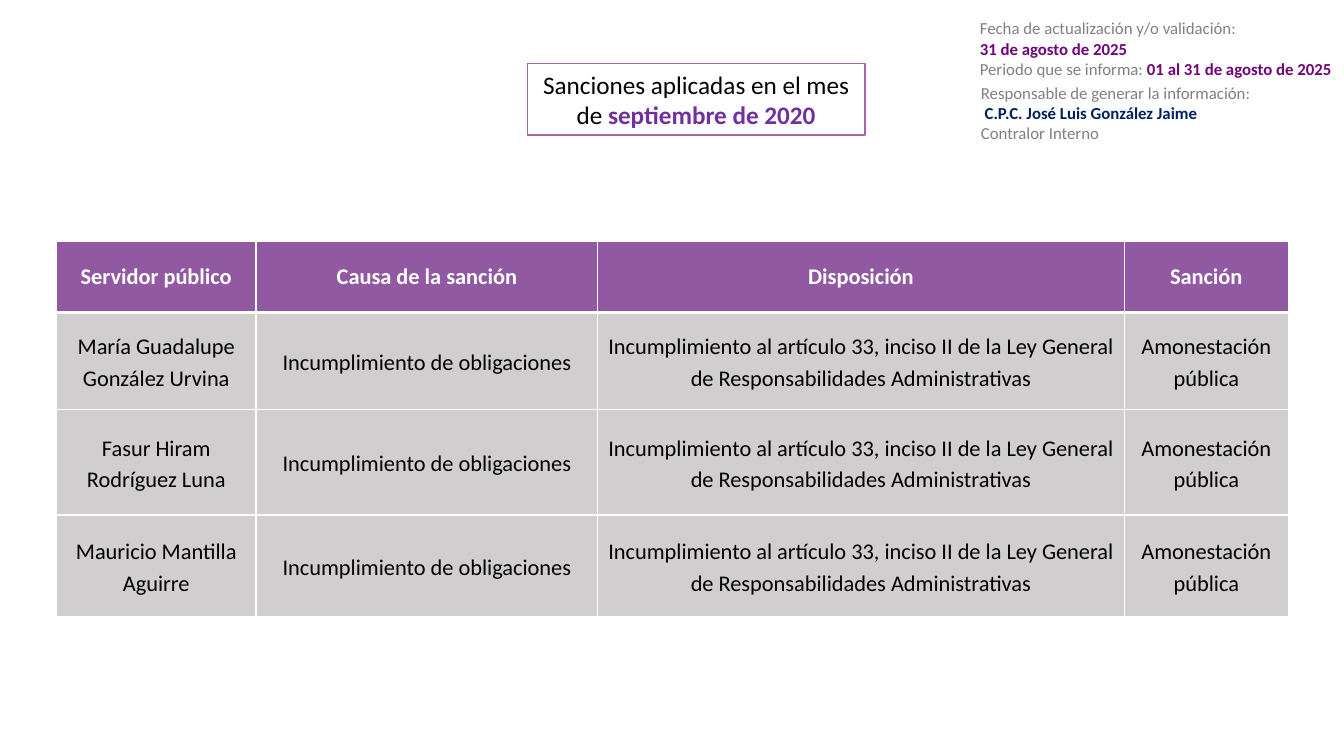
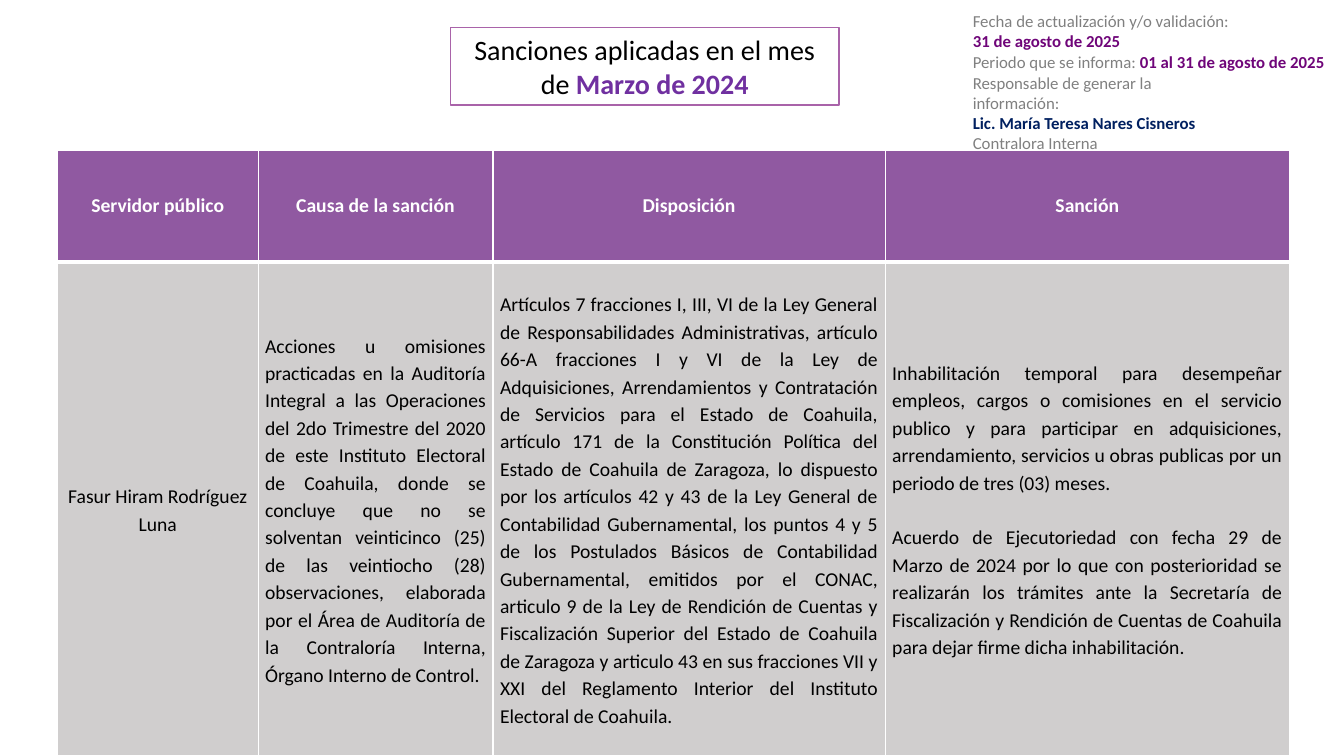
from lxml import etree
from pptx import Presentation
from pptx.dml.color import RGBColor
from pptx.enum import text
from pptx.oxml.ns import qn
from pptx.util import Inches, Pt

# Shared look
FONT = "Calibri"
WHITE = RGBColor(0xFF, 0xFF, 0xFF)
BLACK = RGBColor(0x00, 0x00, 0x00)
HEADER_PURPLE = RGBColor(0x90, 0x59, 0xA1)
CELL_GRAY = RGBColor(0xD0, 0xCE, 0xCE)
TITLE_BORDER = RGBColor(0xA9, 0x63, 0xA9)
MONTH_PURPLE = RGBColor(0x70, 0x30, 0xA0)
LABEL_GRAY = RGBColor(0x80, 0x80, 0x80)
DATE_PURPLE = RGBColor(0x6F, 0x05, 0x79)
NAME_NAVY = RGBColor(0x00, 0x20, 0x60)
CENTER = text.PP_ALIGN.CENTER
JUSTIFY = text.PP_ALIGN.JUSTIFY

HEADERS = ["Servidor público", "Causa de la sanción", "Disposición", "Sanción"]
DATE_LINES = [
    [("Fecha de actualización y/o validación:", LABEL_GRAY, False)],
    [("31 de agosto de 2025", DATE_PURPLE, True)],
    [("Periodo que se informa: ", LABEL_GRAY, False),
     ("01 al 31 de agosto de 2025", DATE_PURPLE, True)],
]

# Slide contents; each cell is a list of paragraphs
REPEATED_CELLS = [
    ["Incumplimiento de obligaciones"],
    ["Incumplimiento al artículo 33, inciso II de la Ley General de "
     "Responsabilidades Administrativas"],
    ["Amonestación pública"],
]
OFFICIALS = ["María Guadalupe González Urvina", "Fasur Hiram Rodríguez Luna",
             "Mauricio Mantilla Aguirre"]

SLIDES = [
    {
        "month": "septiembre de 2020",
        "title_box": (5.23, 0.63, 3.35, 0.71), "title_size": 18,
        "date_box": (9.62, 0.13, 3.7, 0.71),
        "contact_box": (9.63, 0.77, 3.11, 0.71),
        "contact": (" C.P.C. José Luis González Jaime", "Contralor Interno"),
        "table_at": (0.56, 2.39), "table_size": 16,
        "columns": [1.98, 3.39, 5.22, 1.63],
        "heights": [0.71, 0.96, 1.05, 1.01],
        "alignments": [CENTER] * 4,
        "rows": [[[official]] + REPEATED_CELLS for official in OFFICIALS],
    },
    {
        "month": "Marzo de 2024",
        "title_box": (4.47, 0.27, 3.85, 0.77), "title_size": 20,
        "date_box": (9.55, 0.06, 3.7, 0.71),
        "contact_box": (9.55, 0.67, 2.65, 0.91),
        "contact": ("Lic. María Teresa Nares Cisneros", "Contralora Interna"),
        "table_at": (0.57, 1.49), "table_size": 14,
        "columns": [1.99, 2.33, 3.89, 4.01],
        "heights": [1.11, 4.9],
        "alignments": [CENTER, JUSTIFY, JUSTIFY, JUSTIFY],
        "rows": [[
            ["Fasur Hiram Rodríguez Luna"],
            ["Acciones u omisiones practicadas en la Auditoría Integral a las "
             "Operaciones del 2do Trimestre del 2020 de este Instituto Electoral "
             "de Coahuila, donde se concluye que no se solventan veinticinco (25) "
             "de las veintiocho (28) observaciones, elaborada por el Área de "
             "Auditoría de la Contraloría Interna, Órgano Interno de Control."],
            ["Artículos 7 fracciones I, III, VI de la Ley General de "
             "Responsabilidades Administrativas, artículo 66-A fracciones I y VI "
             "de la Ley de Adquisiciones, Arrendamientos y Contratación de "
             "Servicios para el Estado de Coahuila, artículo 171 de la "
             "Constitución Política del Estado de Coahuila de Zaragoza, lo "
             "dispuesto por los artículos 42 y 43 de la Ley General de "
             "Contabilidad Gubernamental, los puntos 4 y 5 de los Postulados "
             "Básicos de Contabilidad Gubernamental, emitidos por el CONAC, "
             "articulo 9 de la Ley de Rendición de Cuentas y Fiscalización "
             "Superior del Estado de Coahuila de Zaragoza y articulo 43 en sus "
             "fracciones VII y XXI del Reglamento Interior del Instituto "
             "Electoral de Coahuila."],
            ["Inhabilitación temporal para desempeñar empleos, cargos o "
             "comisiones en el servicio publico y para participar en "
             "adquisiciones, arrendamiento, servicios u obras publicas por un "
             "periodo de tres (03) meses.",
             "Acuerdo de Ejecutoriedad con fecha 29 de Marzo de 2024 por lo que "
             "con posterioridad se realizarán los trámites ante la Secretaría de "
             "Fiscalización y Rendición de Cuentas de Coahuila para dejar firme "
             "dicha inhabilitación."],
        ]],
    },
]


def write_lines(frame, lines, size, alignment=None, spacing=None, gap=0):
    """Fill a text frame; each line is a list of (text, colour, bold) runs."""
    for index, line in enumerate(lines):
        paragraph = frame.add_paragraph() if index else frame.paragraphs[0]
        paragraph.alignment = alignment
        paragraph.line_spacing = spacing
        if index and gap:
            paragraph.space_before = Pt(gap)
        for content, color, bold in line:
            run = paragraph.add_run()
            run.text = content
            run.font.name = FONT
            run.font.size = Pt(size)
            run.font.bold = bold
            run.font.color.rgb = color


def add_borders(cell, top, bottom):
    """Draw white cell borders; widths are in points."""
    properties = cell._tc.get_or_add_tcPr()
    widths = {"a:lnL": 1, "a:lnR": 1, "a:lnT": top, "a:lnB": bottom}
    for position, (tag, width) in enumerate(widths.items()):
        line = etree.Element(qn(tag), w=str(Pt(width)))
        fill = etree.SubElement(line, qn("a:solidFill"))
        etree.SubElement(fill, qn("a:srgbClr"), val=str(WHITE))
        properties.insert(position, line)


presentation = Presentation()
presentation.slide_width = Inches(13.33)
presentation.slide_height = Inches(7.5)
title_only = presentation.slide_layouts[5]

for content in SLIDES:
    slide = presentation.slides.add_slide(title_only)

    # Framed title
    title = slide.shapes.title
    title.left, title.top, title.width, title.height = map(Inches, content["title_box"])
    title.fill.solid()
    title.fill.fore_color.rgb = WHITE
    title.line.color.rgb = TITLE_BORDER
    title.line.width = Pt(1)
    title.text_frame.auto_size = text.MSO_AUTO_SIZE.NONE
    title.text_frame.vertical_anchor = text.MSO_ANCHOR.MIDDLE
    write_lines(title.text_frame,
                [[("Sanciones aplicadas en el mes de ", BLACK, False),
                  (content["month"], MONTH_PURPLE, True)]],
                content["title_size"], CENTER)

    # Update date and person in charge
    name, position = content["contact"]
    contact_lines = [
        [("Responsable de generar la información:", LABEL_GRAY, False)],
        [(name, NAME_NAVY, True)],
        [(position, LABEL_GRAY, False)],
    ]
    for box, lines, wrap in [(content["date_box"], DATE_LINES, False),
                             (content["contact_box"], contact_lines, True)]:
        frame = slide.shapes.add_textbox(*map(Inches, box)).text_frame
        frame.word_wrap = wrap
        write_lines(frame, lines, 12)

    # Sanctions table
    columns, heights = content["columns"], content["heights"]
    left, top = content["table_at"]
    table = slide.shapes.add_table(
        len(heights), len(columns), Inches(left), Inches(top),
        Inches(sum(columns)), Inches(sum(heights))).table
    table.horz_banding = False
    for column, width in zip(table.columns, columns):
        column.width = Inches(width)
    for row, height in zip(table.rows, heights):
        row.height = Inches(height)

    size = content["table_size"]
    rows = [[[header] for header in HEADERS]] + content["rows"]
    for row_index, row in enumerate(rows):
        is_header = row_index == 0
        for column_index, paragraphs in enumerate(row):
            cell = table.cell(row_index, column_index)
            cell.vertical_anchor = text.MSO_ANCHOR.MIDDLE
            cell.fill.solid()
            cell.fill.fore_color.rgb = HEADER_PURPLE if is_header else CELL_GRAY
            add_borders(cell, 3 if row_index == 1 else 1, 3 if is_header else 1)
            color = WHITE if is_header else BLACK
            lines = [[(paragraph, color, is_header)] for paragraph in paragraphs]
            if is_header:
                write_lines(cell.text_frame, lines, size, CENTER)
            else:
                cell.margin_left = cell.margin_right = Inches(0.07)
                cell.margin_top = cell.margin_bottom = 0
                write_lines(cell.text_frame, lines, size,
                            content["alignments"][column_index], 1.15, 19.6)

presentation.save("out.pptx")
